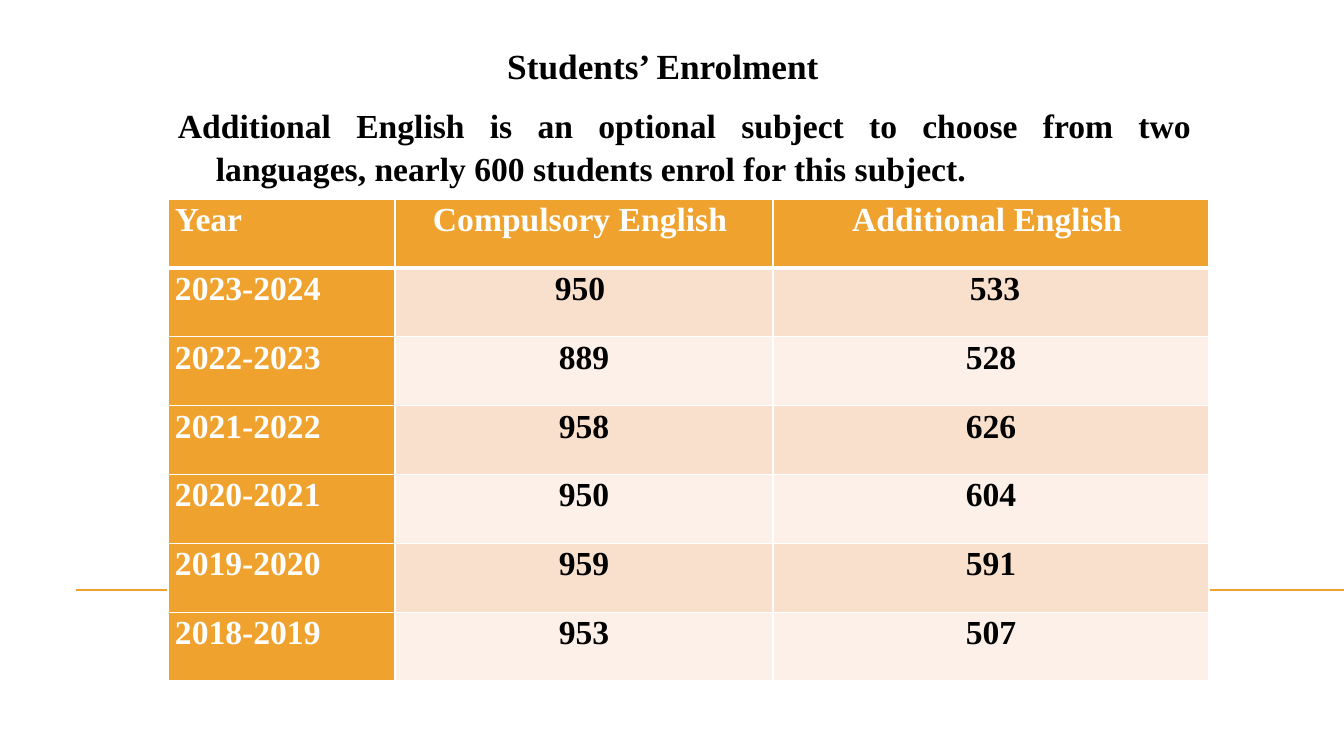
"""Build the students' enrolment slide."""
from lxml.etree import SubElement
from pptx import Presentation
from pptx.dml.color import RGBColor
from pptx.enum.shapes import MSO_CONNECTOR
from pptx.enum.text import MSO_ANCHOR, PP_ALIGN
from pptx.oxml.ns import qn
from pptx.util import Emu, Pt

ORANGE = RGBColor(0xF0, 0xA2, 0x2E)
PEACH = RGBColor(0xF9, 0xE0, 0xCD)
CREAM = RGBColor(0xFC, 0xF0, 0xE8)
WHITE = RGBColor(0xFF, 0xFF, 0xFF)
BLACK = RGBColor(0x00, 0x00, 0x00)

ENROLMENT = [
    ("Year", "Compulsory English", "Additional English"),
    ("2023-2024", "950", "533"),
    ("2022-2023", "889", "528"),
    ("2021-2022", "958", "626"),
    ("2020-2021", "950", "604"),
    ("2019-2020", "959", "591"),
    ("2018-2019", "953", "507"),
]
COLUMN_WIDTHS = [227, 378, 436]
TABLE_HEIGHT = 482
CELL_MARGIN = 7
NUDGE = 8
NUDGED_LEFT = {(0, 1), (0, 2), (1, 1)}
NUDGED_RIGHT = {(1, 2)}


def px(length):
    return Emu(round(length * 914400 / 100.8))


def write(frame, text, size, color, alignment):
    para = frame.paragraphs[0]
    para.text = text
    para.alignment = alignment
    para.font.name = "Times New Roman"
    para.font.size = Pt(size)
    para.font.bold = True
    para.font.color.rgb = color
    return para


deck = Presentation()
deck.slide_width, deck.slide_height = px(1344), px(756)
page = deck.slides.add_slide(deck.slide_layouts[6])

rule = page.shapes.add_connector(MSO_CONNECTOR.STRAIGHT, px(76), px(590), px(1344), px(590))
rule.line.color.rgb = ORANGE
rule.line.width = Pt(0.75)
SubElement(rule._element.spPr, qn("a:effectLst"))

title = page.shapes.add_textbox(px(168), px(36), px(1008), px(51)).text_frame
title.word_wrap = True
title.vertical_anchor = MSO_ANCHOR.BOTTOM
title.margin_left = title.margin_top = title.margin_bottom = 0
title.margin_right = px(18)
write(title, "Students’ Enrolment", 25.2, BLACK, PP_ALIGN.CENTER)

intro = page.shapes.add_textbox(px(168), px(97), px(1033), px(92)).text_frame
intro.word_wrap = True
intro_para = write(
    intro,
    "Additional English is an optional subject to choose from two languages, "
    "nearly 600 students enrol for this subject.",
    24, BLACK, PP_ALIGN.JUSTIFY,
)
intro_para.line_spacing = 1.07
indent = px(38)
intro_para._p.get_or_add_pPr().set("marL", str(indent))
intro_para._p.get_or_add_pPr().set("indent", str(-indent))

table = page.shapes.add_table(
    len(ENROLMENT), len(COLUMN_WIDTHS),
    px(168), px(199), px(sum(COLUMN_WIDTHS)), px(TABLE_HEIGHT),
).table
for column, width in zip(table.columns, COLUMN_WIDTHS):
    column.width = px(width)
for row in table.rows:
    row.height = px(TABLE_HEIGHT / len(ENROLMENT))

for row_index, record in enumerate(ENROLMENT):
    for column_index, text in enumerate(record):
        cell = table.cell(row_index, column_index)
        place = (row_index, column_index)
        heading = row_index == 0 or column_index == 0
        cell.margin_top = cell.margin_bottom = 0
        cell.margin_left = px(CELL_MARGIN + NUDGE * (place in NUDGED_RIGHT))
        cell.margin_right = px(CELL_MARGIN + NUDGE * (place in NUDGED_LEFT))

        for side in ("lnL", "lnR", "lnT", "lnB"):
            thick = (row_index, side) in {(0, "lnB"), (1, "lnT")}
            border = SubElement(cell._tc.get_or_add_tcPr(), qn(f"a:{side}"))
            border.set("w", str(Pt(3 if thick else 1)))
            border_fill = SubElement(border, qn("a:solidFill"))
            SubElement(border_fill, qn("a:srgbClr")).set("val", str(WHITE))

        cell.fill.solid()
        band = PEACH if row_index % 2 else CREAM
        cell.fill.fore_color.rgb = ORANGE if heading else band
        alignment = PP_ALIGN.CENTER if column_index else PP_ALIGN.LEFT
        para = write(cell.text_frame, text, 24, WHITE if heading else BLACK, alignment)
        para.line_spacing = 1.07

deck.save("out.pptx")
